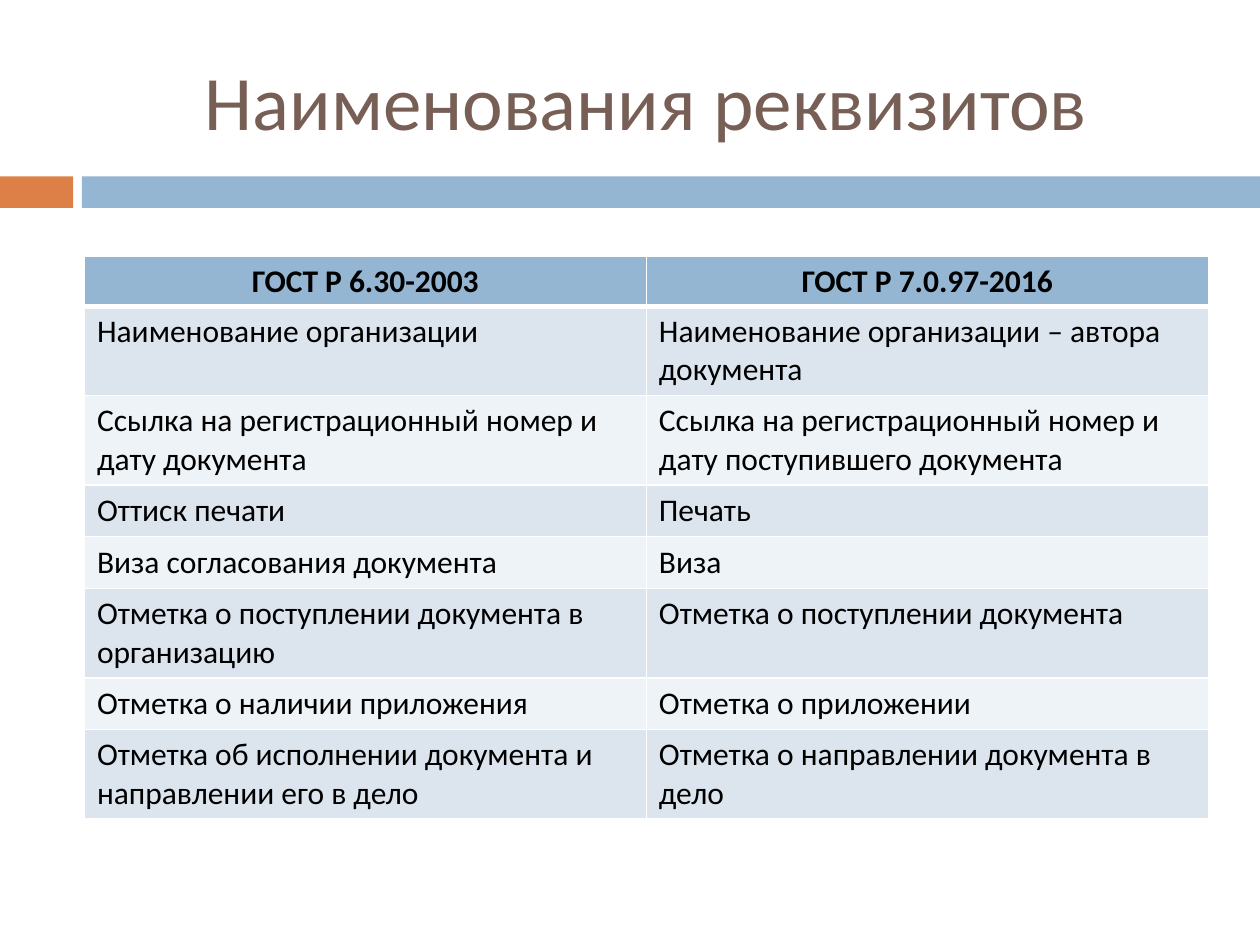
import pptx
import pptx.dml.color
import pptx.enum.shapes
import pptx.enum.text
import pptx.oxml
import pptx.oxml.ns
import pptx.util
from pptx.util import Inches

FONT = "Calibri"
ORANGE, BLUE, BROWN = "DD8047", "94B6D2", "775F55"
BLACK, WHITE = "000000", "FFFFFF"
BANDS = ("DCE5EE", "EEF3F7")
ONE_LINE, TWO_LINES = 0.41, 0.71
HEADINGS = ("ГОСТ Р 6.30-2003", "ГОСТ Р 7.0.97-2016")
REQUISITES = [
    (TWO_LINES, "Наименование организации",
     "Наименование организации – автора документа"),
    (TWO_LINES, "Ссылка на регистрационный номер и дату документа",
     "Ссылка на регистрационный номер и дату поступившего документа"),
    (ONE_LINE, "Оттиск печати", "Печать"),
    (ONE_LINE, "Виза согласования документа", "Виза"),
    (TWO_LINES, "Отметка о поступлении документа в организацию",
     "Отметка о поступлении документа"),
    (ONE_LINE, "Отметка о наличии приложения", "Отметка о приложении"),
    (TWO_LINES, "Отметка об исполнении документа и направлении его в дело",
     "Отметка о направлении документа в дело"),
]


def color(value):
    """Return the colour for a hex string."""
    return pptx.dml.color.RGBColor.from_string(value)


def write(text_frame, text, size, text_color, bold=False, centered=False):
    """Put one formatted paragraph into a text frame."""
    text_frame.text = text
    paragraph = text_frame.paragraphs[0]
    align = pptx.enum.text.PP_ALIGN
    paragraph.alignment = align.CENTER if centered else align.LEFT
    font = paragraph.runs[0].font
    font.name, font.size, font.bold = FONT, pptx.util.Pt(size), bold
    font.color.rgb = color(text_color)


def set_borders(cell, **widths):
    """Draw white cell borders, with widths in points by side."""
    properties = cell._tc.get_or_add_tcPr()
    for index, side in enumerate("LRTB"):
        line = pptx.oxml.parse_xml(
            f'<a:ln{side} {pptx.oxml.ns.nsdecls("a")} w="{pptx.util.Pt(widths.get(side, 1))}">'
            f'<a:solidFill><a:srgbClr val="{WHITE}"/></a:solidFill></a:ln{side}>'
        )
        properties.insert(index, line)


def add_title(slide, left, top, width, height):
    """Add the slide title, centred in its box."""
    text_frame = slide.shapes.add_textbox(left, top, width, height).text_frame
    text_frame.word_wrap = True
    text_frame.vertical_anchor = pptx.enum.text.MSO_ANCHOR.MIDDLE
    write(text_frame, "Наименования реквизитов", 44, BROWN, centered=True)


def add_stripe(slide, left, top, width, height):
    """Add the two-coloured stripe, split by a narrow gap."""
    accent_width, gap = Inches(0.58), Inches(0.07)
    offset = accent_width + gap
    parts = ((left, accent_width, ORANGE), (left + offset, width - offset, BLUE))
    for part_left, part_width, fill in parts:
        shape = slide.shapes.add_shape(
            pptx.enum.shapes.MSO_SHAPE.RECTANGLE, part_left, top, part_width, height)
        shape.shadow.inherit = False
        shape.fill.solid()
        shape.fill.fore_color.rgb = color(fill)
        shape.line.fill.background()


def add_comparison(slide, left, top, width, height):
    """Add the table that compares the names in the two standards."""
    rows = [(0.4, *HEADINGS), *REQUISITES]
    table = slide.shapes.add_table(
        len(rows), len(HEADINGS), left, top, width, height).table
    for row_index, (row_height, *texts) in enumerate(rows):
        table.rows[row_index].height = Inches(row_height)
        header = row_index == 0
        for column_index, text in enumerate(texts):
            cell = table.cell(row_index, column_index)
            write(cell.text_frame, text, 18, BLACK, bold=header, centered=header)
            cell.fill.solid()
            cell.fill.fore_color.rgb = color(BLUE if header else BANDS[(row_index - 1) % 2])
            set_borders(cell, T=3 if row_index == 1 else 1, B=3 if header else 1)


def main():
    """Build and save the presentation."""
    presentation = pptx.Presentation()
    presentation.slide_width, presentation.slide_height = Inches(10), Inches(7.5)
    slide = presentation.slides.add_slide(presentation.slide_layouts[6])
    left, width = Inches(0.67), Inches(8.92)
    add_stripe(slide, 0, Inches(1.4), presentation.slide_width, Inches(0.25))
    add_title(slide, left, Inches(0.25), width, Inches(1.08))
    add_comparison(slide, left, Inches(2.03), width, Inches(4.47))
    presentation.save("out.pptx")


if __name__ == "__main__":
    main()
